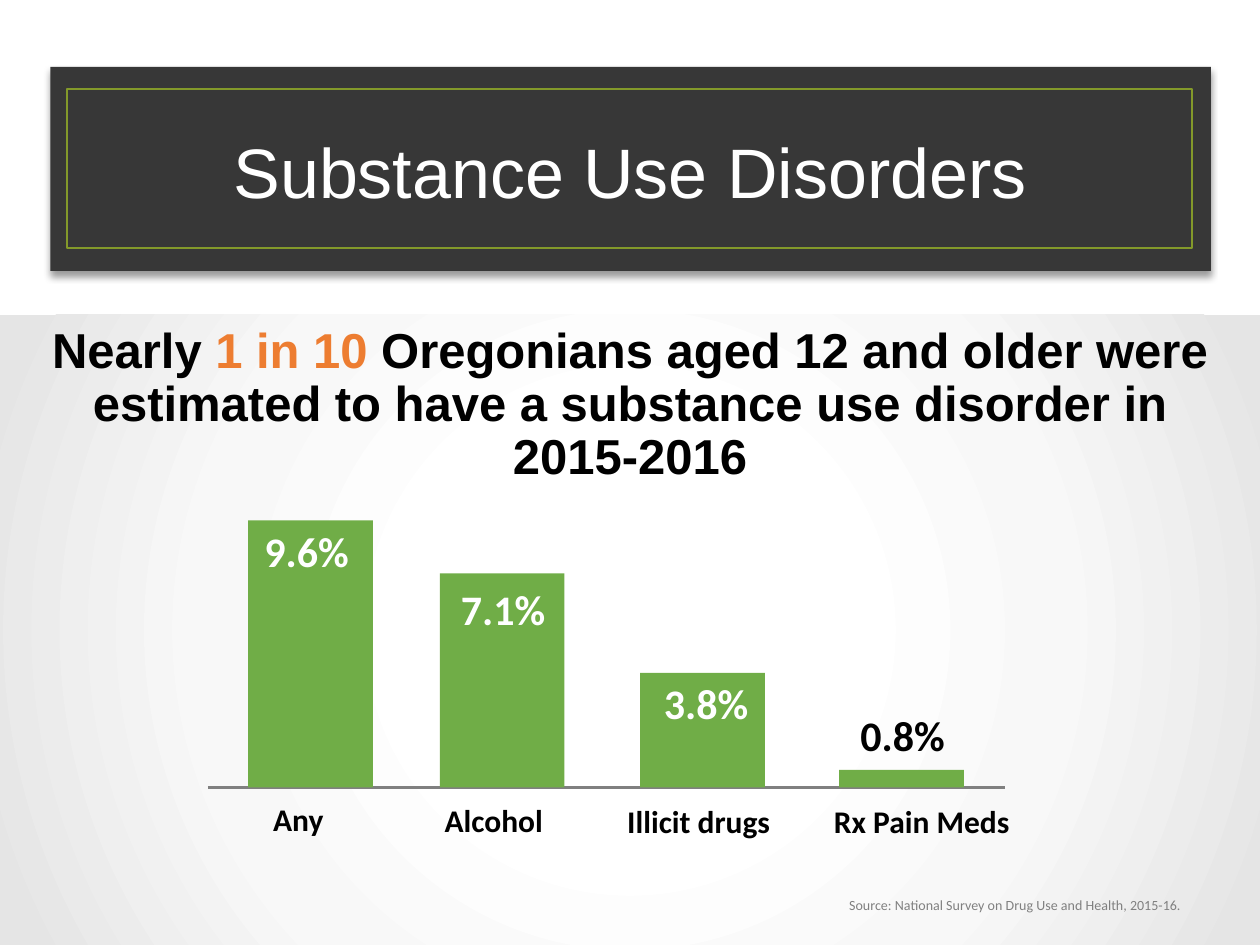
from pptx import Presentation
from pptx.dml.color import RGBColor
from pptx.enum.shapes import MSO_CONNECTOR, MSO_SHAPE
from pptx.enum.text import MSO_ANCHOR, PP_ALIGN
from pptx.oxml import parse_xml
from pptx.oxml.ns import nsdecls, qn
from pptx.util import Inches, Pt

COLORS = {
    "banner": "373737", "frame": "83992A", "bar": "70AD47", "accent": "ED7D31",
    "gray": "808080", "white": "FFFFFF", "black": "000000",
}
BACKDROP_STOPS = [(0, "FFFFFF"), (30, "FFFFFF"), (61, "F8F8F8"), (97, "E5E5E5")]


def add_rect(x, y, w, h, fill=None, line=None):
    sp = s.shapes.add_shape(MSO_SHAPE.RECTANGLE, Inches(x), Inches(y), Inches(w), Inches(h))
    sp.shadow.inherit = False
    if fill:
        sp.fill.solid()
        sp.fill.fore_color.rgb = RGBColor.from_string(COLORS[fill])
    else:
        sp.fill.background()
    if line:
        sp.line.color.rgb = RGBColor.from_string(COLORS[line])
        sp.line.width = Pt(1.25)
    else:
        sp.line.fill.background()
    return sp


def set_text(sp, *runs, size, font="Calibri", bold=False,
             align=PP_ALIGN.LEFT, anchor=MSO_ANCHOR.TOP, spacing=None):
    """Fill a shape with one paragraph of (text, color) runs."""
    tf = sp.text_frame
    tf.word_wrap = True
    tf.vertical_anchor = anchor
    p = tf.paragraphs[0]
    p.alignment = align
    if spacing:
        p.line_spacing = spacing
    for text, color in runs:
        r = p.add_run()
        r.text = text
        r.font.size, r.font.name, r.font.bold = Pt(size), font, bold
        r.font.color.rgb = RGBColor.from_string(COLORS[color])


prs = Presentation()
prs.slide_width, prs.slide_height = Inches(10), Inches(7.5)
s = prs.slides.add_slide(prs.slide_layouts[5])
title = s.shapes.title

# Title banner with a soft shadow
banner = add_rect(0.4, 0.53, 9.21, 1.62, fill="banner")
banner._element.spPr.find(qn("a:effectLst")).append(parse_xml(
    f'<a:outerShdw {nsdecls("a")} blurRad="{Pt(4)}" dist="{Pt(3)}" dir="5400000" rotWithShape="0">'
    '<a:srgbClr val="000000"><a:alpha val="40000"/></a:srgbClr></a:outerShdw>'))

# Title, raised above the banner
banner._element.addnext(title._element)
title.left, title.top = Inches(0.66), Inches(0.87)
title.width, title.height = Inches(8.68), Inches(0.96)
set_text(title, ("Substance Use Disorders", "white"), size=40, font="Arial",
         align=PP_ALIGN.CENTER, anchor=MSO_ANCHOR.MIDDLE)
add_rect(0.53, 0.71, 8.93, 1.26, line="frame")

# Radial gradient behind the body
backdrop = add_rect(0, 2.5, 10, 5, fill="white")
stops = "".join(f'<a:gs pos="{pos * 1000}"><a:srgbClr val="{color}"/></a:gs>'
                for pos, color in BACKDROP_STOPS)
spPr = backdrop._element.spPr
spPr.replace(spPr.find(qn("a:solidFill")), parse_xml(
    f'<a:gradFill {nsdecls("a")} rotWithShape="1"><a:gsLst>{stops}</a:gsLst><a:path path="circle">'
    '<a:fillToRect l="50000" t="50000" r="50000" b="50000"/></a:path></a:gradFill>'))

# Headline
headline = s.shapes.add_textbox(Inches(0.2), Inches(2.7), Inches(9.6), Inches(1.04))
set_text(headline, ("Nearly ", "black"), ("1 in 10 ", "accent"),
         ("Oregonians aged 12 and older were estimated to have a substance use disorder in 2015-2016",
          "black"),
         size=28, font="Arial", bold=True, spacing=0.9,
         align=PP_ALIGN.CENTER, anchor=MSO_ANCHOR.MIDDLE)

# Baseline
baseline = 6.25
axis = s.shapes.add_connector(MSO_CONNECTOR.STRAIGHT, Inches(1.65), Inches(baseline),
                              Inches(7.98), Inches(baseline))
axis.line.color.rgb = RGBColor.from_string(COLORS["gray"])
axis.line.width = Pt(1.5)
axis._element.spPr.append(parse_xml(f'<a:effectLst {nsdecls("a")}/>'))

# Bars: left, height; value, its place and color; name, its place and width
bars = [
    (1.97, 2.12, "9.6%", 2.0, 4.12, "white", "Any", 2.07, 6.3, 1.64),
    (3.49, 1.7, "7.1%", 3.56, 4.58, "white", "Alcohol", 3.43, 6.31, 1.64),
    (5.08, 0.91, "3.8%", 5.17, 5.33, "white", "Illicit drugs", 4.88, 6.32, 1.64),
    (6.66, 0.14, "0.8%", 6.73, 5.58, "black", "Rx Pain Meds", 6.52, 6.32, 2.51),
]
for x, h, value, value_x, value_y, color, name, name_x, name_y, name_w in bars:
    add_rect(x, baseline - h, 0.99, h, fill="bar")
    tb = s.shapes.add_textbox(Inches(value_x), Inches(value_y), Inches(1.05), Inches(0.5))
    set_text(tb, (value, color), size=24, bold=True)
    tb = s.shapes.add_textbox(Inches(name_x), Inches(name_y), Inches(name_w), Inches(0.4))
    set_text(tb, (name, "black"), size=18, bold=True)

# Source line
source = s.shapes.add_textbox(Inches(-0.3), Inches(7.07), Inches(9.8), Inches(0.24))
set_text(source, ("Source: National Survey on Drug Use and Health, 2015-16. ", "gray"),
         size=8, align=PP_ALIGN.RIGHT)

prs.save("out.pptx")
